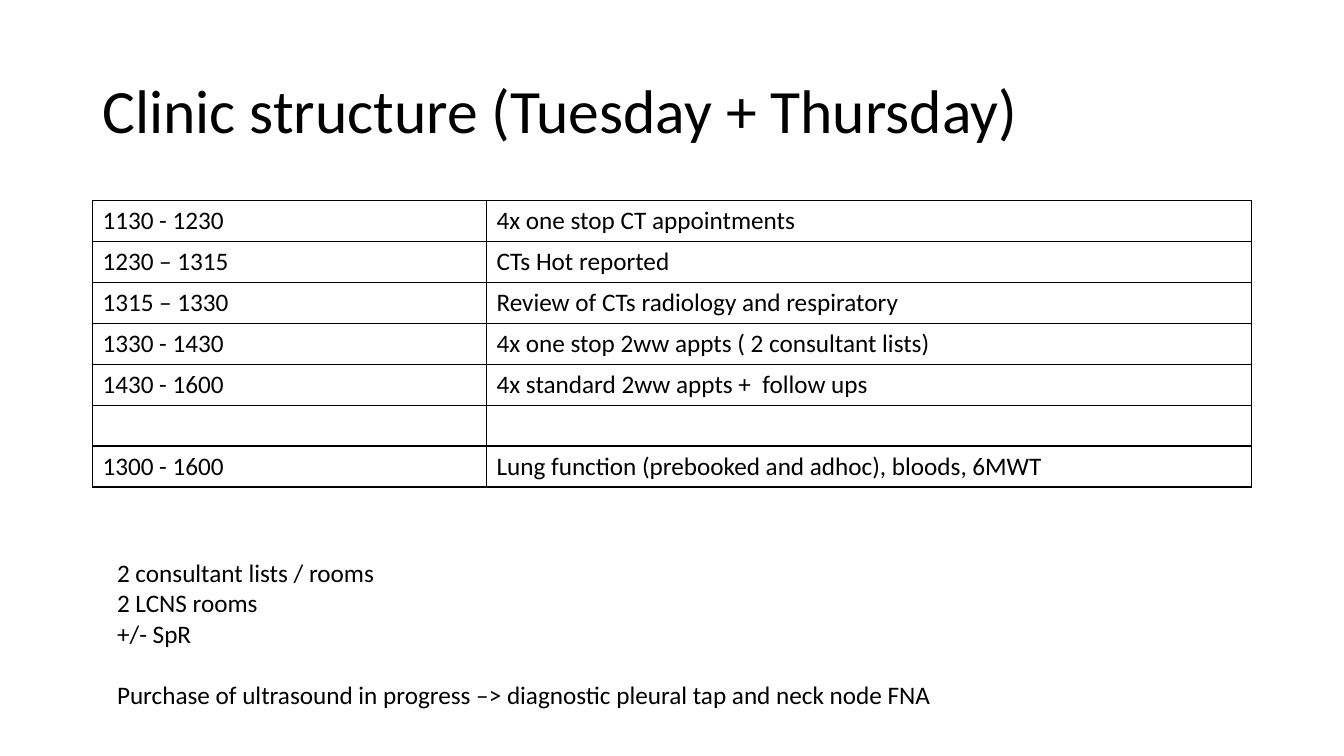
import pptx
import pptx.dml.color
import pptx.enum.text
import pptx.oxml
import pptx.oxml.ns
import pptx.util
from pptx.util import Cm

BLACK = "000000"
TIMETABLE = [
    ("1130 - 1230", "4x one stop CT appointments"),
    ("1230 – 1315", "CTs Hot reported"),
    ("1315 – 1330", "Review of CTs radiology and respiratory"),
    ("1330 - 1430", "4x one stop 2ww appts ( 2 consultant lists)"),
    ("1430 - 1600", "4x standard 2ww appts +  follow ups"),
    ("", ""),
    ("1300 - 1600", "Lung function (prebooked and adhoc), bloods, 6MWT"),
]
ROOMS = ["2 consultant lists / rooms", "2 LCNS rooms", "+/- SpR"]
PURCHASE = "Purchase of ultrasound in progress –> diagnostic pleural tap and neck node FNA"


def color(value):
    return pptx.dml.color.RGBColor.from_string(value)


def apply_format(target, values):
    for name, value in values.items():
        setattr(target, name, value)


class ClinicSlide:
    """Hold the text style and the slide, and add elements to it."""

    def __init__(self, slide, font_name, border_width):
        self.slide = slide
        self.font_name = font_name
        self.border_width = border_width

    def add_run(self, paragraph, text, size):
        run = paragraph.add_run()
        run.text = text
        apply_format(run.font, {"name": self.font_name, "size": pptx.util.Pt(size)})
        run.font.color.rgb = color(BLACK)

    def add_text(self, box, lines, size, frame_format, paragraph_format):
        frame = self.slide.shapes.add_textbox(*box).text_frame
        apply_format(frame, frame_format)
        for index, line in enumerate(lines):
            paragraph = frame.add_paragraph() if index else frame.paragraphs[0]
            apply_format(paragraph, paragraph_format)
            self.add_run(paragraph, line, size)
        return frame

    def add_borders(self, cell):
        properties = cell._tc.get_or_add_tcPr()
        for index, side in enumerate(("lnL", "lnR", "lnT", "lnB")):
            properties.insert(index, pptx.oxml.parse_xml(
                f'<a:{side} {pptx.oxml.ns.nsdecls("a")} w="{pptx.util.Pt(self.border_width)}">'
                f'<a:solidFill><a:srgbClr val="{BLACK}"/></a:solidFill></a:{side}>'
            ))

    def add_table(self, left, top, widths, row_height, rows, size):
        table = self.slide.shapes.add_table(
            len(rows), len(widths), left, top, sum(widths), row_height * len(rows)
        ).table
        apply_format(table, {"first_row": False, "horz_banding": False})
        for column, width in zip(table.columns, widths):
            column.width = width
        for table_row, texts in zip(table.rows, rows):
            table_row.height = row_height
            for cell, text in zip(table_row.cells, texts):
                cell.fill.background()
                self.add_borders(cell)
                if text:
                    self.add_run(cell.text_frame.paragraphs[0], text, size)


def main():
    presentation = pptx.Presentation()
    apply_format(presentation, {"slide_width": Cm(33.87), "slide_height": Cm(19.05)})
    slide = presentation.slides.add_slide(presentation.slide_layouts[6])
    clinic = ClinicSlide(slide, "Calibri", 1)
    left = Cm(2.33)
    clinic.add_text(
        (left, Cm(1.02), Cm(29.21), Cm(3.68)),
        ["Clinic structure (Tuesday + Thursday)"],
        44,
        {"word_wrap": True, "vertical_anchor": pptx.enum.text.MSO_ANCHOR.MIDDLE},
        {"line_spacing": 0.9},
    )
    clinic.add_table(left, Cm(5.06), [Cm(9.93), Cm(19.28)], Cm(1.03), TIMETABLE, 18)
    notes = clinic.add_text(
        (Cm(2.7), Cm(13.92), Cm(21.51), Cm(4.11)),
        [*ROOMS, PURCHASE],
        18,
        {"word_wrap": False, "auto_size": pptx.enum.text.MSO_AUTO_SIZE.SHAPE_TO_FIT_TEXT},
        {},
    )
    notes.paragraphs[-1].space_before = pptx.util.Pt(22)
    presentation.save("out.pptx")


if __name__ == "__main__":
    main()
